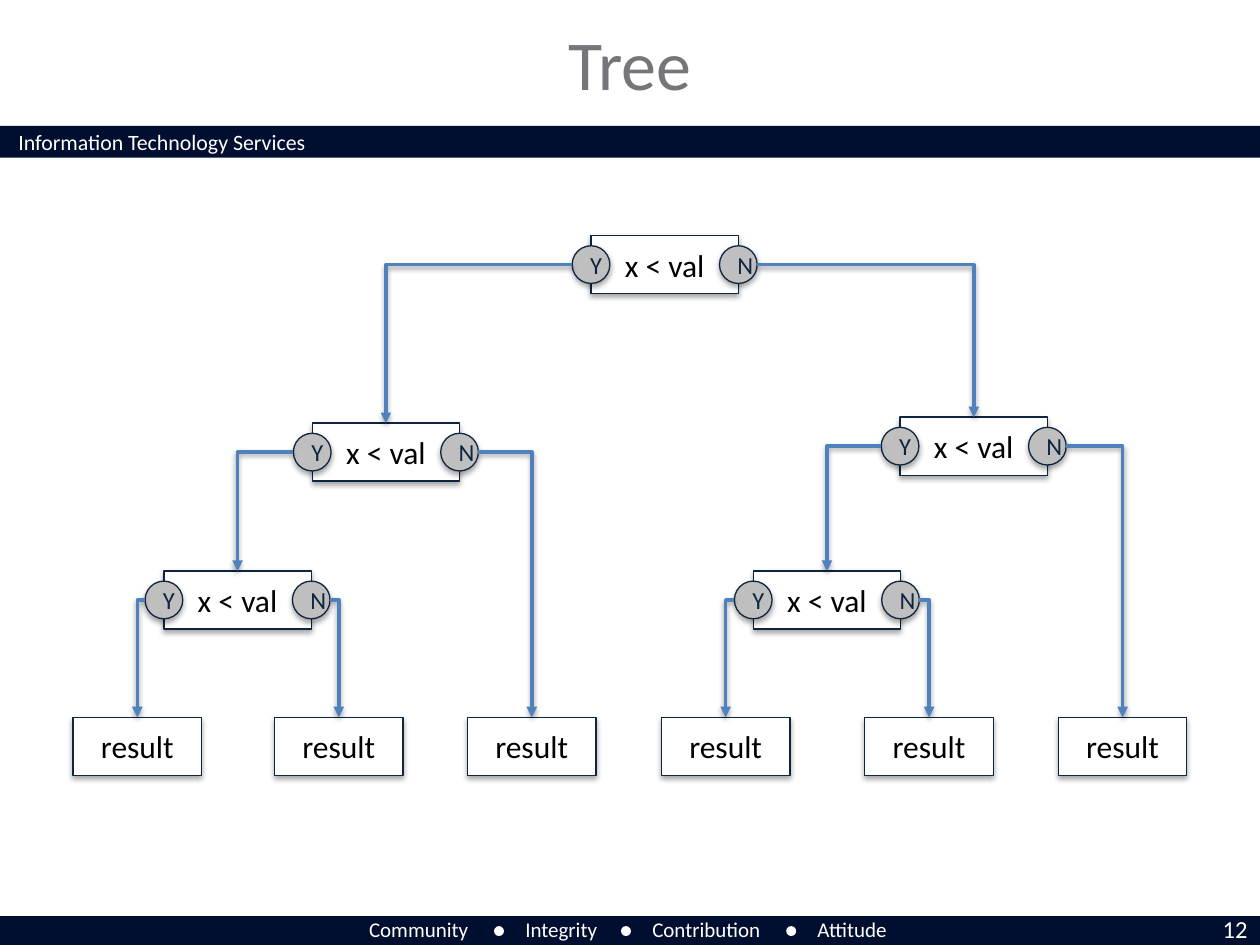
"""Build the decision tree slide with its header and footer bands."""
import pptx
import pptx.dml.color
import pptx.enum.shapes
import pptx.enum.text
import pptx.oxml
import pptx.oxml.ns
import pptx.util

Cm = pptx.util.Cm
Pt = pptx.util.Pt
colour = pptx.dml.color.RGBColor.from_string
Shape = pptx.enum.shapes.MSO_SHAPE
Align = pptx.enum.text.PP_ALIGN
Anchor = pptx.enum.text.MSO_ANCHOR

NAVY, OUTLINE, WHITE = "000E2F", "0F243E", "FFFFFF"
SHADOW = (
    "<a:effectLst %s><a:outerShdw blurRad='40000' dist='%d' dir='5400000' rotWithShape='0'>"
    "<a:srgbClr val='000000'><a:alpha val='%d'/></a:srgbClr></a:outerShdw></a:effectLst>"
)
NAMESPACE = pptx.oxml.ns.nsdecls("a")


def write(shape, text, size, hue, align=Align.LEFT, anchor=Anchor.TOP, wrap=True):
    frame = shape.text_frame
    frame.word_wrap = wrap
    frame.vertical_anchor = anchor
    para = frame.paragraphs[0]
    para.text = text
    para.alignment = align
    para.font.name = "Calibri"
    para.font.size = Pt(size)
    para.font.color.rgb = colour(hue)


def add_node(kind, centre, top, width, height, fill, text, size, hue):
    node = page.shapes.add_shape(kind, Cm(centre - width / 2), Cm(top), Cm(width), Cm(height))
    node.fill.solid()
    node.fill.fore_color.rgb = colour(fill)
    node.line.color.rgb = colour(OUTLINE)
    node.line.width = Pt(0.75)
    node._element.spPr.append(pptx.oxml.parse_xml(SHADOW % (NAMESPACE, 23000, 35000)))
    write(node, text, size, hue, Align.CENTER, Anchor.MIDDLE)
    return node


deck = pptx.Presentation()
deck.slide_width = Cm(25.4)
deck.slide_height = Cm(19.05)
page = deck.slides.add_slide(deck.slide_layouts[6])

bands = [(Shape.RECTANGLE, 0, top, 25.4, height, NAVY) for top, height in ((2.54, 0.64), (18.47, 0.58))]
dots = [(Shape.OVAL, left, 18.67, 0.2, 0.2, WHITE) for left in (9.96, 12.52, 15.85)]
for kind, left, top, width, height, fill in bands + dots:
    plain = page.shapes.add_shape(kind, Cm(left), Cm(top), Cm(width), Cm(height))
    plain.shadow.inherit = False
    plain.fill.solid()
    plain.fill.fore_color.rgb = colour(fill)
    plain.line.fill.background()

header = page.shapes.add_textbox(Cm(0.12), Cm(2.46), Cm(8.64), Cm(0.81))
write(header, "Information Technology Services", 12.5, WHITE)

values = [("Community", 7.19, 2.54), ("Integrity", 10.34, 2.03), ("Contribution", 12.9, 2.79), ("Attitude", 16.23, 1.98)]
for word, left, width in values:
    box = page.shapes.add_textbox(Cm(left), Cm(18.36), Cm(width), Cm(0.76))
    write(box, word, 12, WHITE, wrap=False)

number = page.shapes.add_textbox(Cm(23.47), Cm(18.31), Cm(1.93), Cm(0.86))
write(number, "12", 14, WHITE, Align.RIGHT)

title = page.shapes.add_textbox(Cm(2.54), Cm(0.25), Cm(20.32), Cm(2.03))
write(title, "Tree", 40, "747679", Align.CENTER, Anchor.MIDDLE)

nodes = {}
for index, centre in enumerate((2.77, 6.83, 10.72, 14.63, 18.73, 22.63), 1):
    nodes[f"result {index}"] = add_node(
        Shape.FLOWCHART_PROCESS, centre, 14.46, 2.59, 1.17, WHITE, "result", 18, "000000")

box_width, box_height, circle_size = 2.97, 1.17, 0.76
tests = {
    "root": (13.4, 4.75, "left", "right"),
    "left": (7.78, 8.53, "left low", "result 3"),
    "right": (19.63, 8.41, "right low", "result 6"),
    "left low": (4.79, 11.51, "result 1", "result 2"),
    "right low": (16.67, 11.51, "result 4", "result 5"),
}
branches = []
for name, (centre, top, yes, no) in tests.items():
    nodes[name] = add_node(
        Shape.FLOWCHART_PROCESS, centre, top, box_width, box_height, WHITE, "x < val", 18, "000000")
    for answer, side, site, target in (("Y", -1, 2, yes), ("N", 1, 6, no)):
        circle = add_node(
            Shape.OVAL, centre + side * box_width / 2, top + (box_height - circle_size) / 2,
            circle_size, circle_size, "BFBFBF", answer, 14, OUTLINE)
        branches.append((circle, side, site, target))

for circle, side, site, target in branches:
    child = nodes[target]
    start = circle.left + (circle.width if side > 0 else 0)
    arrow = page.shapes.add_connector(
        pptx.enum.shapes.MSO_CONNECTOR.ELBOW, start, circle.top + circle.height // 2,
        child.left + child.width // 2, child.top)
    arrow._connect_begin_to(circle, site)
    arrow.end_connect(child, 0)
    arrow.line.color.rgb = colour("4F81BD")
    arrow.line.width = Pt(2)
    properties = arrow._element.spPr
    properties.find(pptx.oxml.ns.qn("a:prstGeom")).set("prst", "bentConnector2")
    properties.find(pptx.oxml.ns.qn("a:ln")).append(
        pptx.oxml.parse_xml(f"<a:tailEnd {NAMESPACE} type='triangle'/>"))
    properties.append(pptx.oxml.parse_xml(SHADOW % (NAMESPACE, 20000, 38000)))

deck.save("out.pptx")
